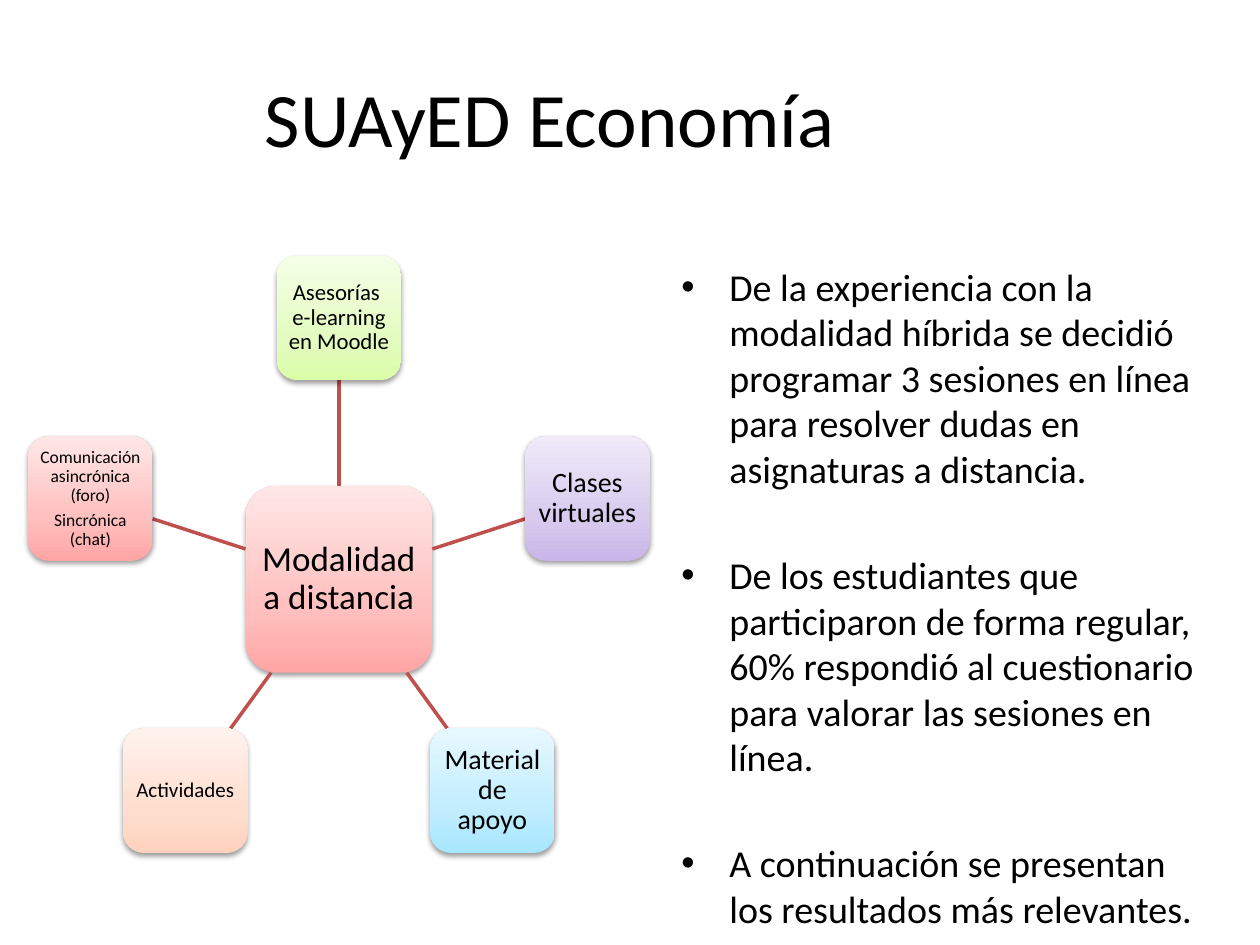
from dataclasses import dataclass
from math import cos, radians, sin

from lxml import etree
from pptx import Presentation
from pptx.dml.color import RGBColor
from pptx.enum.shapes import MSO_CONNECTOR, MSO_SHAPE
from pptx.enum.text import MSO_ANCHOR, PP_ALIGN
from pptx.oxml.ns import qn
from pptx.util import Inches, Pt

ROUNDED = MSO_SHAPE.ROUNDED_RECTANGLE
STRAIGHT = MSO_CONNECTOR.STRAIGHT
MIDDLE = MSO_ANCHOR.MIDDLE
CENTER = PP_ALIGN.CENTER


@dataclass(frozen=True)
class Theme:
    font: str = "Calibri"
    ink: str = "000000"
    spoke: str = "C0504D"
    red: tuple = ("FFA6A5", "FFC0BF", "FFE7E7")
    green: tuple = ("DAFDA7", "E4FCC2", "F5FFE7")
    purple: tuple = ("C9B5E8", "D8CBEE", "F0EAF9")
    blue: tuple = ("A7E6FF", "C1EDFF", "E7F8FF")
    orange: tuple = ("FFD2BD", "FFDED0", "FFF2ED")
    title_size: float = 44
    hub_size: float = 20
    body_size: float = 21.7


THEME = Theme()
GRADIENT_STOPS = (0, 35000, 100000)

TITLE_BOX = (0.5, 0.3, 7.73, 1.25)
DIAGRAM_BOX = (0.22, 2.03, 4.94, 4.74)
BULLETS_BOX = (5.31, 2.04, 4.42, 5.16)

HUB_TEXT = "Modalidad a distancia"
# Clockwise from the top: paragraphs, colours, type size, margin
NODES = [
    (["Asesorías \ve-learning en Moodle"], THEME.green, 13, 0.04),
    (["Clases virtuales"], THEME.purple, 16, 0.04),
    (["Material de apoyo"], THEME.blue, 16, 0.04),
    (["Actividades"], THEME.orange, 12, 0.03),
    (["Comunicación asincrónica\v(foro)", "Sincrónica\v(chat)"], THEME.red, 10, 0.03),
]
BULLETS = [
    "De la experiencia con la modalidad híbrida se decidió programar 3 sesiones "
    "en línea para resolver dudas en asignaturas a distancia.",
    "De los estudiantes que participaron de forma regular, 60% respondió al "
    "cuestionario para valorar las sesiones en línea.",
    "A continuación se presentan los resultados más relevantes.",
]


def style(para, size):
    para.font.name = THEME.font
    para.font.size = Pt(size)
    para.font.color.rgb = RGBColor.from_string(THEME.ink)


def add_text_box(page, box):
    frame = page.shapes.add_textbox(*map(Inches, box)).text_frame
    frame.word_wrap = True
    return frame


def add_title(page, box, text):
    frame = add_text_box(page, box)
    frame.vertical_anchor = MIDDLE
    para = frame.paragraphs[0]
    para.text = text
    para.alignment = CENTER
    style(para, THEME.title_size)


def add_color(parent, color):
    return etree.SubElement(parent, qn("a:srgbClr"), val=color)


def paint(shape, colors):
    """Three-stop gradient, darkest at the bottom, with a soft shadow below."""
    shape.fill.gradient()
    shape.fill.gradient_angle = 90
    shape.line.fill.background()
    shape.shadow.inherit = False
    properties = shape._element.spPr
    stops = properties.find(".//" + qn("a:gsLst"))
    for stop in list(stops):
        stops.remove(stop)
    for position, color in zip(GRADIENT_STOPS, colors):
        add_color(etree.SubElement(stops, qn("a:gs"), pos=str(position)), color)
    shadow = etree.SubElement(
        properties.find(qn("a:effectLst")), qn("a:outerShdw"),
        blurRad=str(Pt(3.1)), dist=str(Pt(1.6)), dir="5400000", rotWithShape="0")
    etree.SubElement(add_color(shadow, "000000"), qn("a:alpha"), val="38000")


def add_node(page, center, side, texts, colors, size, margin):
    left, top = (middle - side / 2 for middle in center)
    node = page.shapes.add_shape(ROUNDED, *map(Inches, (left, top, side, side)))
    paint(node, colors)
    frame = node.text_frame
    frame.word_wrap = True
    frame.vertical_anchor = MIDDLE
    frame.margin_left = frame.margin_right = Inches(margin)
    frame.margin_top = frame.margin_bottom = Inches(margin)
    for index, text in enumerate(texts):
        para = frame.paragraphs[0] if index == 0 else frame.add_paragraph()
        para.text = text
        para.alignment = CENTER
        para.line_spacing = 0.9
        if index:
            para.space_before = Pt(size * 0.35)
        style(para, size)
    return node


def add_spoke(page, start, end):
    spoke = page.shapes.add_connector(STRAIGHT, *map(Inches, (*start, *end)))
    spoke.line.color.rgb = RGBColor.from_string(THEME.spoke)
    spoke.line.width = Pt(2)
    etree.SubElement(spoke._element.spPr, qn("a:effectLst"))
    return spoke


def add_radial_diagram(page, box):
    """Hub with nodes on a ring; spokes run from the hub's edge to each node's."""
    left, top, width, height = box
    hub_side, node_side = width * 0.3, width * 0.2
    radius = (height - node_side) / (1 + cos(radians(36)))
    hub_x, hub_y = left + width / 2, top + node_side / 2 + radius
    hub = add_node(page, (hub_x, hub_y), hub_side, [HUB_TEXT],
                   THEME.red, THEME.hub_size, 0.06)
    for index, (texts, colors, size, margin) in enumerate(NODES):
        angle = radians(index * 360 / len(NODES))
        across, up = sin(angle), cos(angle)

        def along(distance):
            return hub_x + distance * across, hub_y - distance * up

        reach = max(abs(across), abs(up))
        spoke = add_spoke(page, along(hub_side / 2 / reach),
                          along(radius - node_side / 2 / reach))
        node = add_node(page, along(radius), node_side, texts, colors, size, margin)
        if index == 0:
            spoke.begin_connect(hub, 0)
            spoke.end_connect(node, 2)


def add_bullets(page, box, texts):
    frame = add_text_box(page, box)
    for index, text in enumerate(texts):
        para = frame.paragraphs[0] if index == 0 else frame.add_paragraph()
        para.text = text
        if index:
            para.space_before = Pt(34.5)
        properties = para._p.get_or_add_pPr()
        properties.set("marL", str(Inches(0.38)))
        properties.set("indent", str(Inches(-0.38)))
        etree.SubElement(properties, qn("a:buFont"), typeface="Arial")
        etree.SubElement(properties, qn("a:buChar"), char="•")
        style(para, THEME.body_size)


def main():
    deck = Presentation()
    deck.slide_width, deck.slide_height = Inches(10), Inches(7.5)
    page = deck.slides.add_slide(deck.slide_layouts[6])
    add_title(page, TITLE_BOX, "SUAyED Economía")
    add_radial_diagram(page, DIAGRAM_BOX)
    add_bullets(page, BULLETS_BOX, BULLETS)
    deck.save("out.pptx")


if __name__ == "__main__":
    main()
